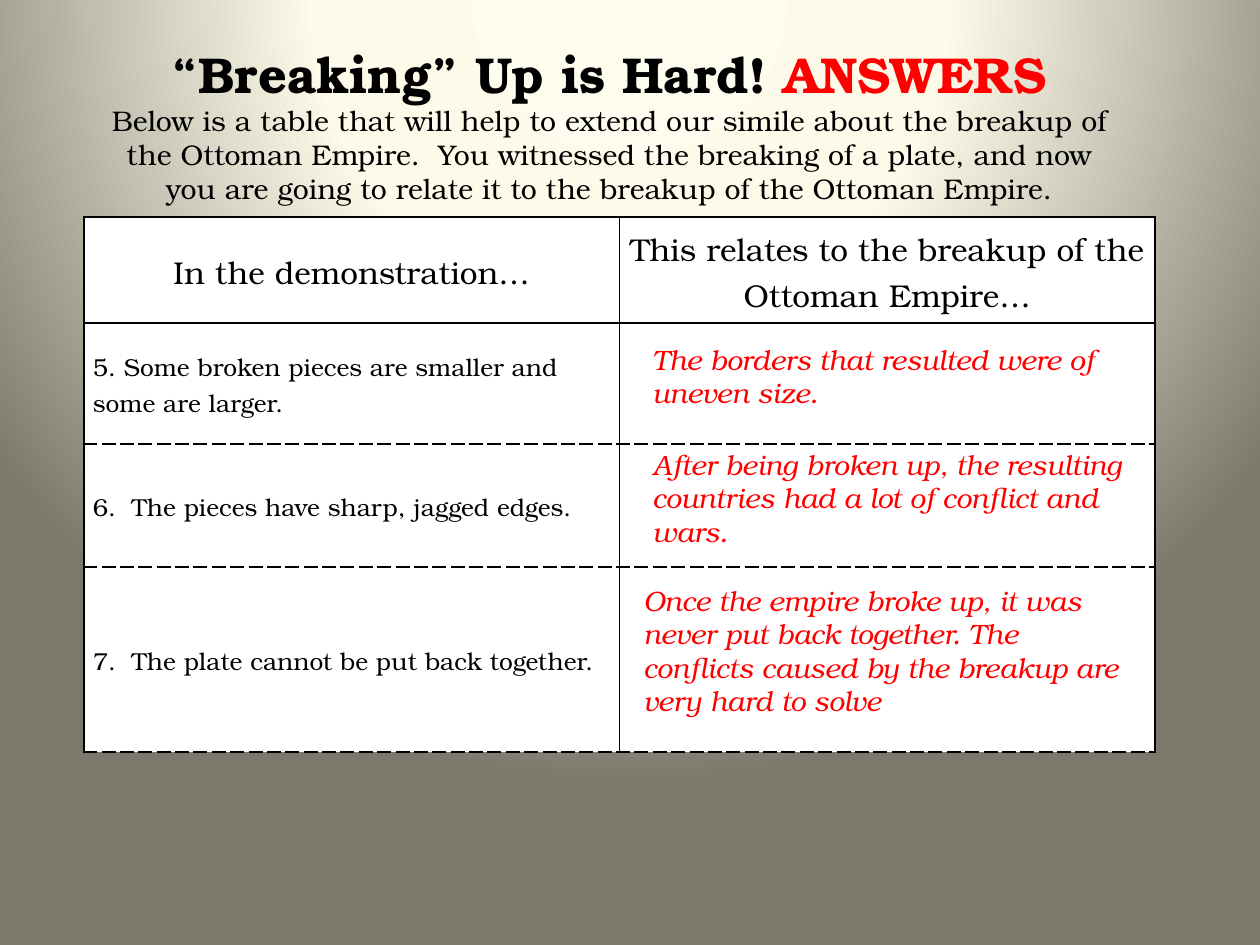
from pptx import Presentation
from pptx.dml.color import RGBColor
from pptx.enum.text import MSO_ANCHOR, MSO_AUTO_SIZE, PP_ALIGN
from pptx.oxml import parse_xml
from pptx.util import Pt

SCALE = 914400 / 126
MIDDLE = MSO_ANCHOR.MIDDLE
LEFT, CENTER = PP_ALIGN.LEFT, PP_ALIGN.CENTER
FIXED, GROW = MSO_AUTO_SIZE.NONE, MSO_AUTO_SIZE.SHAPE_TO_FIT_TEXT
NS = 'xmlns:a="http://schemas.openxmlformats.org/drawingml/2006/main"'
BLACK, RED, WHITE = "000000", "FF0000", "FFFFFF"


def px(n):
    return round(n * SCALE)


def color(code):
    return RGBColor.from_string(code)


class Deck:
    face = "TeX Gyre Bonum"

    def __init__(self, wide, high):
        self.show = Presentation()
        self.show.slide_width, self.show.slide_height = px(wide), px(high)
        self.slide = self.show.slides.add_slide(self.show.slide_layouts[5])

    def style(self, font, size, code, bold=False, italic=False):
        font.name, font.size = self.face, Pt(size)
        font.bold, font.italic = bold, italic
        font.color.rgb = color(code)

    def backdrop(self, stops):
        fill = self.slide.background.fill
        fill.solid()
        old = self.slide.background._cSld.bg.bgPr[0]
        marks = "".join(f'<a:gs pos="{at * 1000}"><a:srgbClr val="{code}"/></a:gs>'
                        for at, code in stops)
        new = parse_xml(
            f'<a:gradFill {NS} rotWithShape="1"><a:gsLst>{marks}</a:gsLst>'
            '<a:path path="circle"><a:fillToRect l="50000" t="-80000" '
            'r="50000" b="180000"/></a:path></a:gradFill>')
        old.getparent().replace(old, new)

    def title(self, x, y, w, h, runs):
        box = self.slide.shapes.title
        box.left, box.top, box.width, box.height = map(px, (x, y, w, h))
        frame = box.text_frame
        frame.auto_size, frame.vertical_anchor = FIXED, MIDDLE
        frame.word_wrap = True
        frame.margin_bottom = px(84)
        para = frame.paragraphs[0]
        para.alignment = CENTER
        for i, (text, size, code, bold) in enumerate(runs):
            if text.startswith("Below"):
                para.add_line_break()
            run = para.add_run()
            run.text = text
            self.style(run.font, size, code, bold)

    def edges(self, cell, dashed):
        for side in "LRTB":
            dash = "dash" if side in dashed else "solid"
            cell._tc.get_or_add_tcPr().append(parse_xml(
                f'<a:ln{side} {NS} w="12700"><a:solidFill><a:srgbClr val="{BLACK}"/>'
                f'</a:solidFill><a:prstDash val="{dash}"/></a:ln{side}>'))

    def cell(self, cell, text, size, align, dashed, inset):
        self.edges(cell, dashed)
        cell.fill.solid()
        cell.fill.fore_color.rgb = color(WHITE)
        cell.vertical_anchor = MIDDLE
        cell.margin_left = cell.margin_right = px(inset)
        cell.margin_top = cell.margin_bottom = 0
        cell.text = text
        para = cell.text_frame.paragraphs[0]
        para.alignment, para.line_spacing = align, 1.1
        self.style(para.font, size, BLACK)

    def table(self, x, y, w, highs, rows):
        grid = self.slide.shapes.add_table(
            len(rows), 2, px(x), px(y), px(w), px(sum(highs))).table
        grid.first_row = grid.horz_banding = False
        for r, (high, row) in enumerate(zip(highs, rows)):
            grid.rows[r].height = px(high)
            look = ((18, CENTER, "", 8), (14, LEFT, "B", 9))[r > 0]
            if r > 1:
                look = (14, LEFT, "TB", 9)
            for c, text in enumerate(row):
                self.cell(grid.cell(r, c), text, *look)

    def answer(self, x, y, w, h, lines, wrap=True):
        box = self.slide.shapes.add_textbox(*map(px, (x, y, w, h)))
        frame = box.text_frame
        frame.word_wrap, frame.auto_size = wrap, GROW
        frame.text = "\n".join(lines)
        for para in frame.paragraphs:
            self.style(para.font, 16, RED, italic=True)

    def save(self):
        self.show.save("out.pptx")


def main():
    deck = Deck(1260, 945)
    deck.backdrop([(0, "FEFCEE"), (40, "FDFAEA"), (100, "7B796B")])
    deck.title(94, 84, 1030, 158, [
        ("“Breaking” Up is Hard! ", 28.8, BLACK, True),
        ("ANSWERS", 28.8, RED, True),
        ("Below is a table that will help to extend our simile about the breakup of "
         "the Ottoman Empire.  You witnessed the breaking of a plate, and now you are "
         "going to relate it to the breakup of the Ottoman Empire.", 16.2, BLACK, False),
    ])
    deck.table(84, 217, 1071, [106, 121, 123, 185], [
        ("In the demonstration…", "This relates to the breakup of the Ottoman Empire…"),
        ("5. Some broken pieces are smaller and some are larger.", ""),
        ("6.  The pieces have sharp, jagged edges.", ""),
        ("7.  The plate cannot be put back together.", ""),
    ])
    deck.answer(640, 336, 485, 81,
                ["The borders that resulted were of", "uneven size."], wrap=False)
    deck.answer(640, 441, 514, 115, [
        "After being broken up, the resulting countries had a lot of conflict and wars."])
    deck.answer(631, 577, 504, 149, [
        "Once the empire broke up, it was never put back together. The conflicts "
        "caused by the breakup are very hard to solve"])
    deck.save()


if __name__ == "__main__":
    main()
